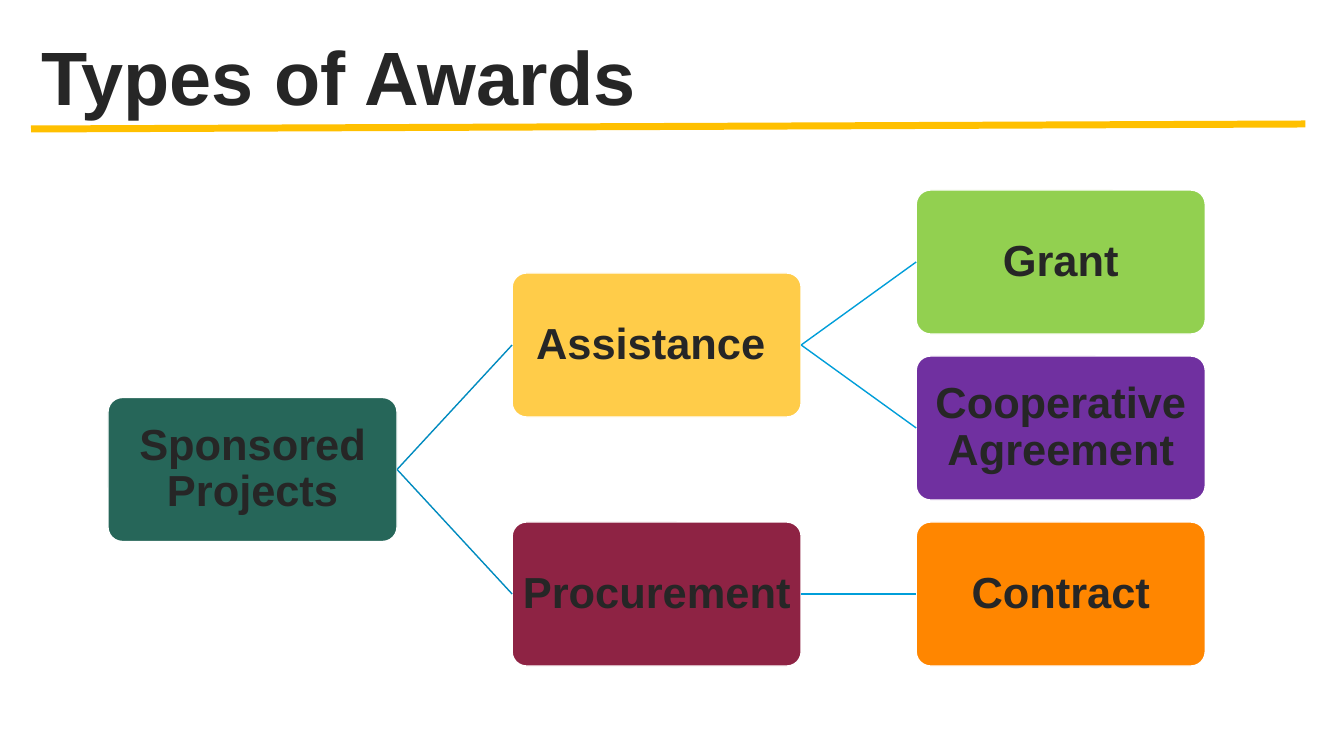
from pptx import Presentation
from pptx.dml.color import RGBColor
from pptx.enum.shapes import MSO_CONNECTOR as Connector, MSO_SHAPE as Shape
from pptx.enum.text import MSO_ANCHOR as Anchor, MSO_AUTO_SIZE as AutoSize, PP_ALIGN as Align
from pptx.oxml.ns import qn
from pptx.util import Emu, Inches, Pt

# Content: label, column, row, fill (a parent sits midway between its children)
TITLE = "Types of Awards"
BOXES = {
    "projects": ("Sponsored Projects", 0, 1.25, "266659"),
    "assistance": ("Assistance ", 1, 0.5, "FFCC49"),
    "procurement": ("Procurement", 1, 2, "8E2344"),
    "grant": ("Grant", 2, 0, "92D050"),
    "cooperative": ("Cooperative Agreement", 2, 1, "7030A0"),
    "contract": ("Contract", 2, 2, "FF8600"),
}
LINKS = [
    ("projects", "assistance", "008BBF"),
    ("projects", "procurement", "008BBF"),
    ("assistance", "grant", "009ED9"),
    ("assistance", "cooperative", "009ED9"),
    ("procurement", "contract", "009ED9"),
]
INK, WHITE, GOLD = "262626", "FFFFFF", "FFC000"

# Layout in px
TREE_LEFT, TREE_TOP = 108, 190
COLUMN_STEP, ROW_STEP = 404, 166
BOX_WIDTH, BOX_HEIGHT = 289, 144
RIGHT_SITE, LEFT_SITE = 3, 1


def px(value):
    return Emu(round(value * 914400 / 100.8))


def color(code):
    return RGBColor.from_string(code)


def place(shape, left, top, width, height):
    shape.left, shape.top = px(left), px(top)
    shape.width, shape.height = px(width), px(height)


def write(shape, text, size, align, anchor, spacing=1.0, inset=(10, 5)):
    frame = shape.text_frame
    frame.word_wrap = True
    frame.auto_size = AutoSize.NONE
    frame.vertical_anchor = anchor
    frame.margin_left = frame.margin_right = px(inset[0])
    frame.margin_top = frame.margin_bottom = px(inset[1])
    paragraph = frame.paragraphs[0]
    paragraph.alignment = align
    paragraph.line_spacing = spacing
    run = paragraph.add_run()
    run.text = text
    run.font.name, run.font.size, run.font.bold = "Arial", Pt(size), True
    run.font.color.rgb = color(INK)


def add_line(slide, line_color, width, start=(0, 0), end=(0, 0)):
    line = slide.shapes.add_connector(Connector.STRAIGHT, *map(px, start + end))
    line.line.color.rgb = color(line_color)
    line.line.width = Pt(width)
    properties = line._element.spPr
    properties.append(properties.makeelement(qn("a:effectLst"), {}))
    return line


def add_box(slide, label, column, row, fill):
    box = slide.shapes.add_shape(Shape.ROUNDED_RECTANGLE, 0, 0, 0, 0)
    place(box, TREE_LEFT + column * COLUMN_STEP, TREE_TOP + row * ROW_STEP,
          BOX_WIDTH, BOX_HEIGHT)
    box.adjustments[0] = 0.1
    box.shadow.inherit = False
    box.fill.solid()
    box.fill.fore_color.rgb = color(fill)
    box.line.color.rgb = color(WHITE)
    box.line.width = Pt(1)
    write(box, label, 31, Align.CENTER, Anchor.MIDDLE, spacing=0.9, inset=(2, 6))
    return box


def main():
    presentation = Presentation()
    presentation.slide_width, presentation.slide_height = Inches(13.33), Inches(7.5)
    slide = presentation.slides.add_slide(presentation.slide_layouts[5])

    # Title and rule
    title = slide.shapes.title
    place(title, 31, 25, 1300, 97)
    write(title, TITLE, 54, Align.LEFT, Anchor.TOP)
    add_line(slide, GOLD, 5, (31, 129), (1305, 124))

    # Tree of award types
    boxes = {key: add_box(slide, *box) for key, box in BOXES.items()}
    for parent, child, line_color in LINKS:
        link = add_line(slide, line_color, 1)
        link.begin_connect(boxes[parent], RIGHT_SITE)
        link.end_connect(boxes[child], LEFT_SITE)

    presentation.save("out.pptx")


if __name__ == "__main__":
    main()
